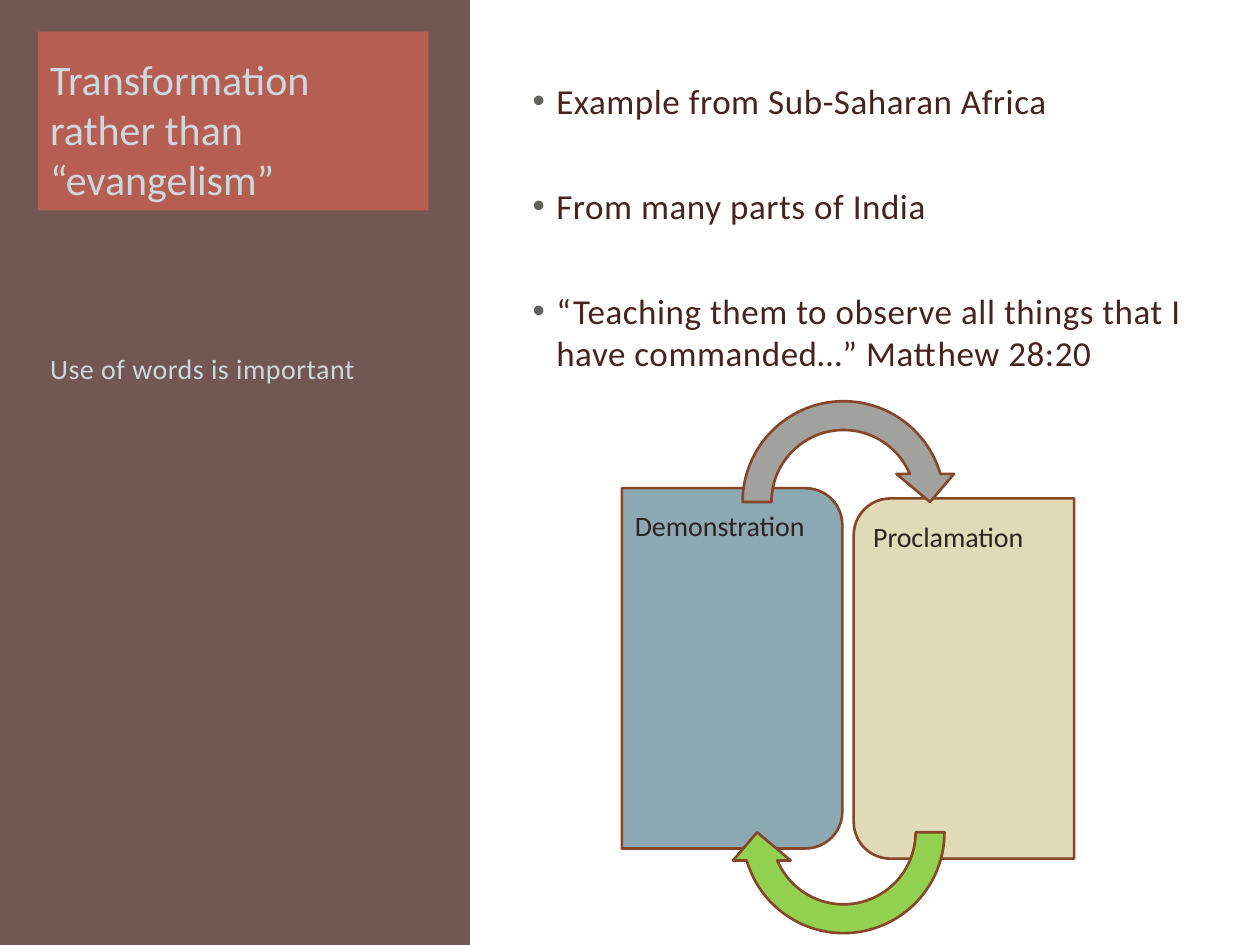
from dataclasses import dataclass

from lxml.etree import SubElement
from pptx import Presentation
from pptx.dml.color import RGBColor
from pptx.enum.shapes import MSO_SHAPE
from pptx.enum.text import MSO_ANCHOR
from pptx.oxml.ns import qn
from pptx.util import Pt


@dataclass(frozen=True)
class Theme:
    font: str = "Calibri"
    title_size: int = 24
    body_size: int = 20
    label_size: int = 16
    dark: str = "48231E"
    pale: str = "CBD8DD"
    label: str = "2E2224"
    bullet: str = "61625E"
    title_fill: str = "B75E52"
    outline: str = "884628"
    demonstration: str = "8BA8B3"
    proclamation: str = "E0DAB6"
    top_arrow: str = "A1A29E"
    bottom_arrow: str = "92D050"


THEME = Theme()


def add_block(slide, kind, box, fill, line=None, rotation=0, adjustments=()):
    block = slide.shapes.add_shape(kind, *map(Pt, box))
    block.shadow.inherit = False
    block.rotation = rotation
    for i, value in enumerate(adjustments):
        block.adjustments[i] = value
    block.fill.solid()
    block.fill.fore_color.rgb = RGBColor.from_string(fill)
    if line:
        block.line.color.rgb = RGBColor.from_string(line)
        block.line.width = Pt(1.5)
    else:
        block.line.fill.background()
    return block


def set_opacity(block, percent):
    color = block.element.spPr.find(qn("a:solidFill")).find(qn("a:srgbClr"))
    SubElement(color, qn("a:alpha")).set("val", str(percent * 1000))


def set_margins(frame, left=7.2, top=3.6, right=7.2, bottom=3.6):
    frame.word_wrap = True
    frame.margin_left, frame.margin_top = Pt(left), Pt(top)
    frame.margin_right, frame.margin_bottom = Pt(right), Pt(bottom)


def style_runs(paragraph, size, color, tracking=0):
    for run in paragraph.runs:
        run.font.name = THEME.font
        run.font.size = Pt(size)
        run.font.color.rgb = RGBColor.from_string(color)
        if tracking:
            run.font._element.set("spc", str(round(tracking * 100)))


def add_text(slide, box, text, size, color, tracking=0, **margins):
    frame = slide.shapes.add_textbox(*map(Pt, box)).text_frame
    set_margins(frame, **margins)
    frame.text = text
    for paragraph in frame.paragraphs:
        style_runs(paragraph, size, color, tracking)
    return frame


def add_bullet(paragraph, indent):
    props = paragraph._p.get_or_add_pPr()
    props.set("marL", str(Pt(indent)))
    props.set("indent", str(-Pt(indent)))
    color = SubElement(props, qn("a:buClr"))
    SubElement(color, qn("a:srgbClr")).set("val", THEME.bullet)
    SubElement(props, qn("a:buFont")).set("typeface", "Arial")
    SubElement(props, qn("a:buChar")).set("char", "•")


def add_sidebar(slide):
    panel = add_block(slide, MSO_SHAPE.RECTANGLE, (0, 0, 268.56, 540), THEME.dark)
    set_opacity(panel, 76)

    title = add_block(slide, MSO_SHAPE.RECTANGLE, (21.6, 18, 223.2, 102.24),
                      THEME.title_fill).text_frame
    set_margins(title)
    title.vertical_anchor = MSO_ANCHOR.BOTTOM
    title.text = "Transformation rather than “evangelism”"
    title.paragraphs[0].alignment = 1
    style_runs(title.paragraphs[0], THEME.title_size, THEME.pale)

    add_text(slide, (21.6, 120.96, 223.2, 370.8), "Use of words is important",
             THEME.label_size, THEME.pale, tracking=0.3, top=80)


def add_examples(slide):
    examples = [
        "Example from Sub-Saharan Africa",
        "From many parts of India",
        "“Teaching them to observe all things that I have commanded…” Matthew 28:20",
    ]
    frame = add_text(slide, (297.36, 41.76, 398.88, 449.28), "\n".join(examples),
                     THEME.body_size, THEME.dark, tracking=0.3)
    for i, paragraph in enumerate(frame.paragraphs):
        add_bullet(paragraph, 13.5)
        paragraph.space_before = Pt(36 if i else 0)


def add_cycle(slide):
    # Two panels turned on their sides, rounded where they meet
    panels = [
        ("Proclamation", (447.84, 324.72), 270, THEME.proclamation,
         (493.92, 290.88), dict(left=5.04, right=7.2)),
        ("Demonstration", (315.36, 318.96), 90, THEME.demonstration,
         (355.68, 285.12), dict(left=7.2, right=5.04)),
    ]
    for name, corner, rotation, fill, label_corner, sides in panels:
        add_block(slide, MSO_SHAPE.ROUND_2_SAME_RECTANGLE, (*corner, 205.92, 126),
                  fill, THEME.outline, rotation, (0.167, 0))
        label = add_text(slide, (*label_corner, 119.52, 193.68), name,
                         THEME.label_size, THEME.label, top=7.92, bottom=7.92, **sides)
        label.paragraphs[0].line_spacing = 0.9

    # Arrows leading from one panel to the other and back
    for top, rotation, fill in ((221.04, 0, THEME.top_arrow),
                                (409.68, 180, THEME.bottom_arrow)):
        add_block(slide, MSO_SHAPE.CIRCULAR_ARROW, (416.16, top, 131.76, 131.76),
                  fill, THEME.outline, rotation,
                  (0.125, 11.423, 204.577, 108, 0.125))


def main():
    deck = Presentation()
    deck.slide_width, deck.slide_height = Pt(720), Pt(540)
    slide = deck.slides.add_slide(deck.slide_layouts[6])
    add_sidebar(slide)
    add_examples(slide)
    add_cycle(slide)
    deck.save("out.pptx")


if __name__ == "__main__":
    main()
